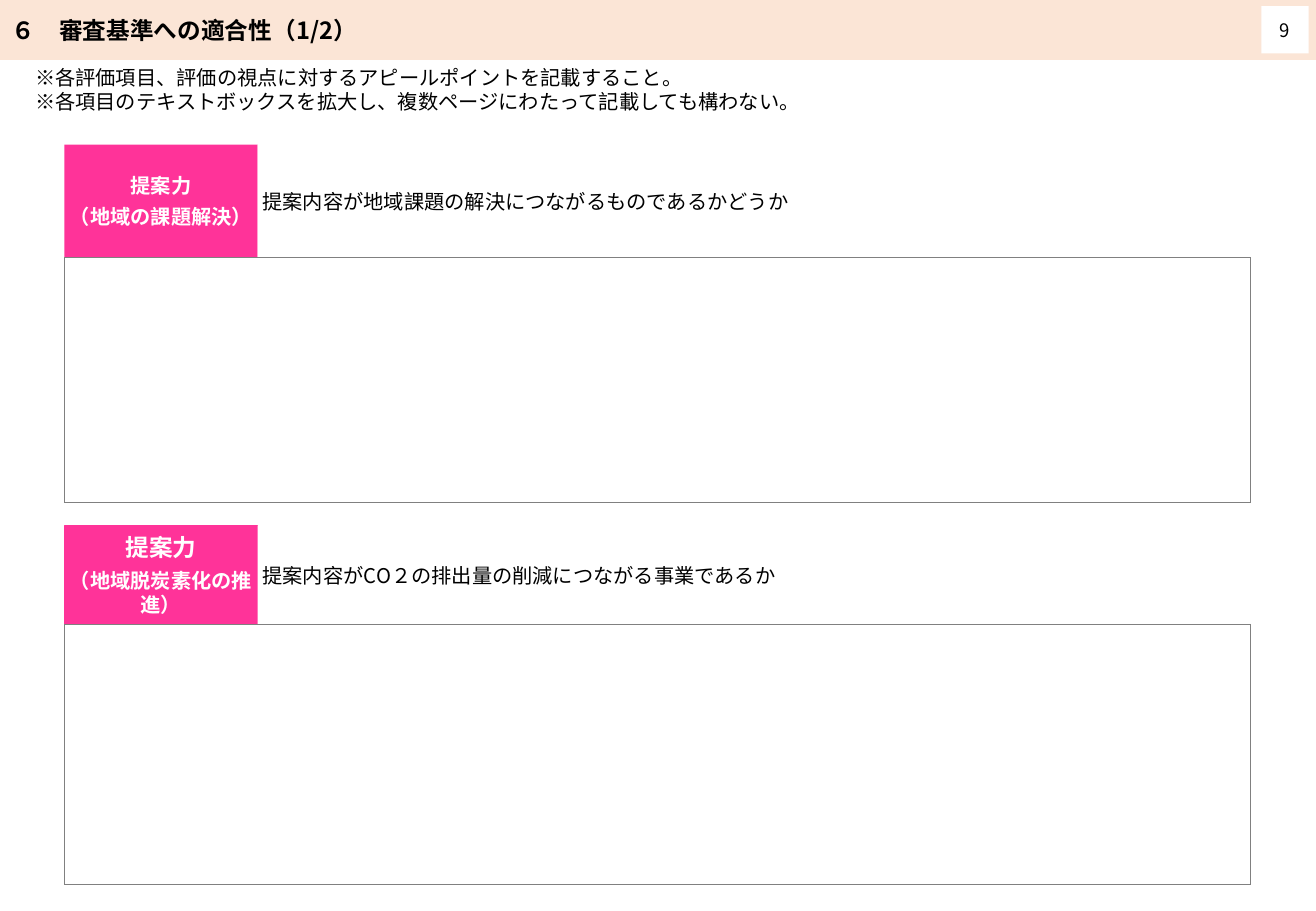
from lxml.etree import SubElement
from pptx import Presentation
from pptx.dml.color import RGBColor
from pptx.enum.shapes import MSO_SHAPE as Shape
from pptx.enum.text import MSO_ANCHOR as Anchor, PP_ALIGN as Align
from pptx.oxml.ns import qn
from pptx.util import Inches, Pt

FONT = "Noto Sans CJK JP"
PEACH, PINK, WHITE, BLACK, GRAY = "FBE5D6", "FF3399", "FFFFFF", "000000", "808080"
LEFT, LABEL_WIDTH, ANSWER_WIDTH = 0.53, 1.59, 9.76

# Each criterion: top, heading height, answer height, label lines with sizes, viewpoint
CRITERIA = [
    (1.19, 0.93, 2.02, [("提案力", 12), ("（地域の課題解決）", 12)],
     "提案内容が地域課題の解決につながるものであるかどうか"),
    (4.33, 0.81, 2.14, [("提案力", 14), ("（地域脱炭素化の推進）", 12)],
     "提案内容がCO２の排出量の削減につながる事業であるか"),
]


def color(value):
    return RGBColor.from_string(value)


def write(box, lines, ink=BLACK, bold=False, align=Align.LEFT,
          anchor=Anchor.MIDDLE, after=0, inset=None):
    """Fill a box with (text, size) lines, one paragraph each."""
    frame = box.text_frame
    frame.word_wrap = True
    frame.vertical_anchor = anchor
    if inset is not None:
        frame.margin_left = frame.margin_right = Inches(inset)
        frame.margin_top = frame.margin_bottom = Inches(inset)
    for index, (text, size) in enumerate(lines):
        para = frame.add_paragraph() if index else frame.paragraphs[0]
        para.alignment = align
        para.space_after = Pt(after)
        span = para.add_run()
        span.text = text
        span.font.size = Pt(size)
        span.font.bold = bold
        span.font.color.rgb = color(ink)
        span.font.name = FONT
        # East Asian characters take their own typeface
        SubElement(span.font._element, qn("a:ea"), typeface=FONT)


def add_block(page, left, top, width, height, fill, line=None, line_width=1):
    block = page.shapes.add_shape(Shape.RECTANGLE, Inches(left), Inches(top),
                                  Inches(width), Inches(height))
    block.shadow.inherit = False
    block.fill.solid()
    block.fill.fore_color.rgb = color(fill)
    if line:
        block.line.color.rgb = color(line)
        block.line.width = Pt(line_width)
    else:
        block.line.fill.background()
    return block


def add_answer_table(page, top, height):
    """Add an empty one-cell table with thin gray borders."""
    frame = page.shapes.add_table(1, 1, Inches(LEFT), Inches(top),
                                  Inches(ANSWER_WIDTH), Inches(height))
    frame.table.first_row = frame.table.horz_banding = False
    cell = frame.table.cell(0, 0)
    properties = cell._tc.get_or_add_tcPr()
    for side in ("lnL", "lnR", "lnT", "lnB"):
        border = SubElement(properties, qn(f"a:{side}"), w=str(Pt(0.5)))
        paint = SubElement(border, qn("a:solidFill"))
        SubElement(paint, qn("a:srgbClr"), val=GRAY)
    cell.fill.background()


def add_criterion(page, top, heading, answer, label, viewpoint):
    line = PINK if label[0][1] == 14 else None
    label_box = add_block(page, LEFT, top, LABEL_WIDTH, heading, PINK, line, 0.75)
    write(label_box, label, ink=WHITE, bold=True, align=Align.CENTER,
          after=4, inset=0.04)
    view_box = add_block(page, LEFT + LABEL_WIDTH, top, 8.18, heading, WHITE)
    write(view_box, [(viewpoint, 12)], after=4, inset=0.04)
    add_answer_table(page, top + heading, answer)


def main():
    deck = Presentation()
    deck.slide_width, deck.slide_height = Inches(10.83), Inches(7.5)
    page = deck.slides.add_slide(deck.slide_layouts[6])

    # Title band and page number
    band = add_block(page, 0, 0, 10.83, 0.49, PEACH, PEACH)
    write(band, [("６\u3000審査基準への適合性（1/2）".replace("\u3000", "　"), 14)], bold=True)
    number = add_block(page, 10.38, 0.05, 0.39, 0.39, WHITE)
    write(number, [("9", 11)], align=Align.CENTER)

    # Instructions
    notes = page.shapes.add_textbox(Inches(0.19), Inches(0.49),
                                    Inches(10.46), Inches(0.5))
    write(notes, [
        ("※各評価項目、評価の視点に対するアピールポイントを記載すること。", 12),
        ("※各項目のテキストボックスを拡大し、複数ページにわたって記載しても構わない。", 12),
    ], anchor=Anchor.TOP)

    # Criteria with their answer areas
    for criterion in CRITERIA:
        add_criterion(page, *criterion)

    deck.save("out.pptx")


if __name__ == "__main__":
    main()
